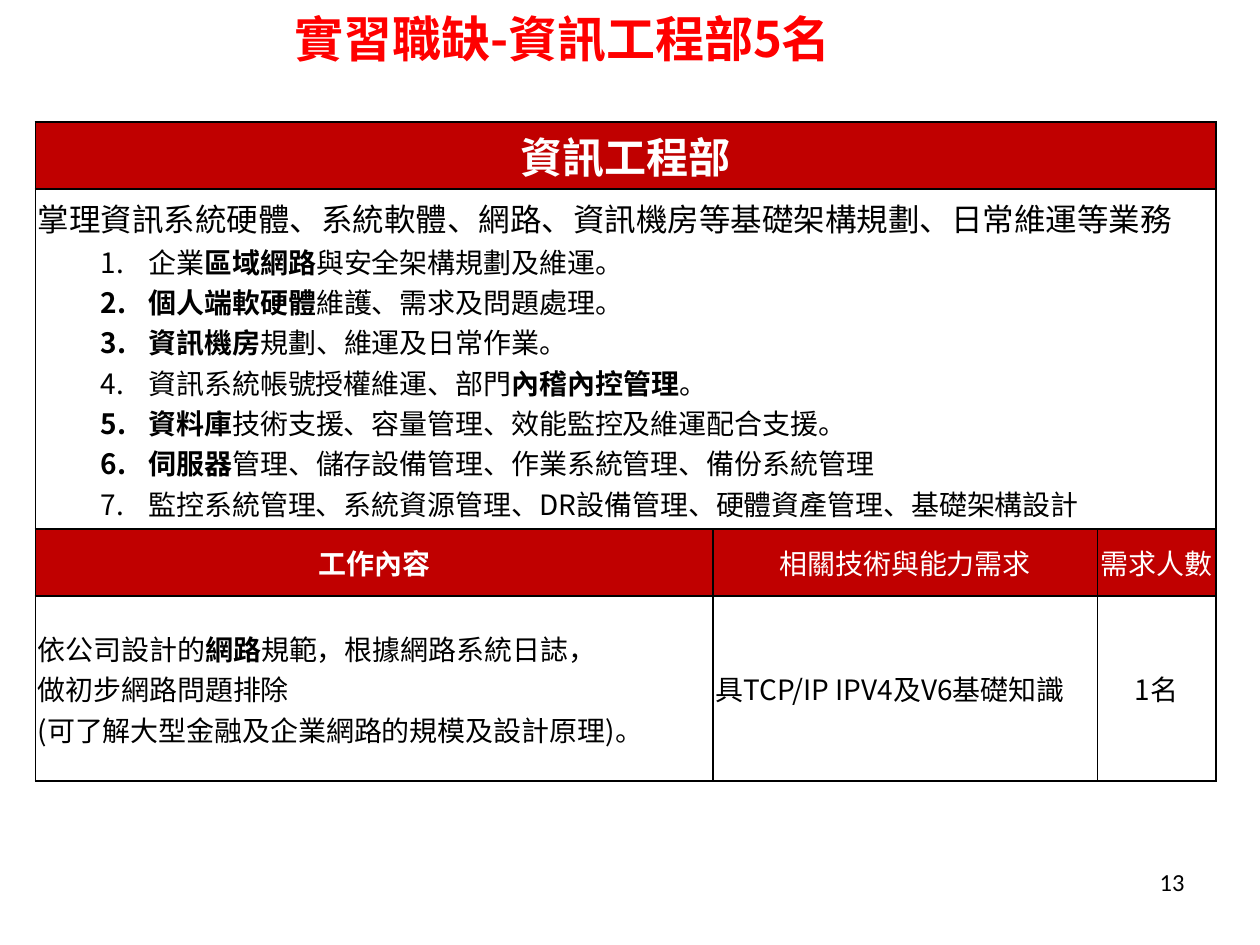
from dataclasses import dataclass

from lxml import etree
from pptx import Presentation
from pptx.dml.color import RGBColor
from pptx.enum.text import MSO_ANCHOR, PP_ALIGN
from pptx.oxml.ns import qn
from pptx.util import Inches, Pt

LEFT, CENTER, RIGHT = PP_ALIGN.LEFT, PP_ALIGN.CENTER, PP_ALIGN.RIGHT
TOP, MIDDLE = MSO_ANCHOR.TOP, MSO_ANCHOR.MIDDLE


@dataclass(frozen=True)
class Theme:
    cjk: str = "Noto Sans CJK SC"
    latin: str = "Calibri"
    title: str = "FF0000"
    band: str = "C00000"
    paper: str = "FFFFFF"
    ink: str = "000000"
    title_size: int = 28
    header_size: int = 24
    lead_size: int = 18
    body_size: int = 16
    number_size: int = 14
    border: float = 1


def write(p, text, *, size, color, font, bold=False, align=LEFT, numbered=False):
    """Fill a paragraph; stretches between ** marks switch bold on and off."""
    p.alignment = align
    if numbered:
        p.level = 1
        pPr = p._p.get_or_add_pPr()
        pPr.set("marL", str(Inches(0.88)))
        pPr.set("indent", str(Inches(-0.38)))
        etree.SubElement(pPr, qn("a:buFont"), typeface="+mj-lt")
        etree.SubElement(pPr, qn("a:buAutoNum"), type="arabicPeriod")
    for i, part in enumerate(text.split("**")):
        if not part:
            continue
        r = p.add_run()
        r.text = part
        r.font.size = Pt(size)
        r.font.bold = bold or i % 2 == 1
        r.font.color.rgb = RGBColor.from_string(color)
        r.font.name = font
        etree.SubElement(r._r.get_or_add_rPr(), qn("a:ea"), typeface=font)


class SlideBuilder:
    def __init__(self, slide, theme):
        self.slide = slide
        self.theme = theme

    def text(self, box, text, anchor=TOP, **fmt):
        sp = self.slide.shapes.add_textbox(*map(Inches, box))
        tf = sp.text_frame
        tf.word_wrap = True
        tf.vertical_anchor = anchor
        write(tf.paragraphs[0], text, **fmt)

    def table(self, left, top, widths, heights):
        frame = self.slide.shapes.add_table(
            len(heights), len(widths), Inches(left), Inches(top),
            Inches(sum(widths)), Inches(sum(heights)))
        table = frame.table
        table.first_row = table.horz_banding = False
        for column, width in zip(table.columns, widths):
            column.width = Inches(width)
        for row, height in zip(table.rows, heights):
            row.height = Inches(height)
        for cell in table.iter_cells():
            self.borders(cell)
        return table

    def borders(self, cell):
        tcPr = cell._tc.get_or_add_tcPr()
        for i, side in enumerate(("a:lnL", "a:lnR", "a:lnT", "a:lnB")):
            ln = etree.Element(qn(side), w=str(Pt(self.theme.border)))
            fill = etree.SubElement(ln, qn("a:solidFill"))
            etree.SubElement(fill, qn("a:srgbClr"), val=self.theme.ink)
            tcPr.insert(i, ln)

    def cell(self, cell, lines, fill=None, **fmt):
        """Write (text, overrides) lines into a cell."""
        cell.margin_left = cell.margin_right = Inches(0.02)
        cell.margin_top = cell.margin_bottom = 0
        cell.vertical_anchor = MIDDLE
        if fill:
            cell.fill.solid()
            cell.fill.fore_color.rgb = RGBColor.from_string(fill)
        else:
            cell.fill.background()
        base = dict(size=self.theme.body_size, color=self.theme.ink,
                    font=self.theme.cjk) | fmt
        tf = cell.text_frame
        for i, (text, overrides) in enumerate(lines):
            p = tf.add_paragraph() if i else tf.paragraphs[0]
            write(p, text, **(base | overrides))


LEAD = "掌理資訊系統硬體、系統軟體、網路、資訊機房等基礎架構規劃、日常維運等業務"
DUTIES = [
    "企業**區域網路**與安全架構規劃及維運。",
    "**個人端軟硬體**維護、需求及問題處理。",
    "**資訊機房**規劃、維運及日常作業。",
    "資訊系統帳號授權維運、部門**內稽內控管理**。",
    "**資料庫**技術支援、容量管理、效能監控及維運配合支援。",
    "**伺服器**管理、儲存設備管理、作業系統管理、備份系統管理",
    "監控系統管理、系統資源管理、DR設備管理、硬體資產管理、基礎架構設計",
]
HEADINGS = ["**工作內容**", "相關技術與能力需求", "需求人數"]
OPENING = [
    (["依公司設計的**網路**規範，根據網路系統日誌，",
      "做初步網路問題排除",
      "(可了解大型金融及企業網路的規模及設計原理)。"], LEFT),
    (["具TCP/IP IPV4及V6基礎知識"], LEFT),
    (["1名"], CENTER),
]


def main():
    prs = Presentation()
    prs.slide_width, prs.slide_height = Inches(10), Inches(7.5)
    theme = Theme()
    s = SlideBuilder(prs.slides.add_slide(prs.slide_layouts[6]), theme)

    s.text((2.24, 0, 7.48, 0.6), "實習職缺-資訊工程部5名", anchor=MIDDLE,
           size=theme.title_size, color=theme.title, font=theme.cjk, bold=True)
    s.text((7.17, 6.83, 2.33, 0.52), "13", size=theme.number_size,
           color=theme.ink, font=theme.latin, align=RIGHT)

    table = s.table(0.28, 0.97, [5.38, 3.05, 0.94], [0.53, 2.7, 0.53, 1.47])
    for row in (0, 1):
        table.cell(row, 0).merge(table.cell(row, 2))
    header = dict(fill=theme.band, color=theme.paper, align=CENTER)
    s.cell(table.cell(0, 0), [("資訊工程部", {})], bold=True,
           size=theme.header_size, **header)
    s.cell(table.cell(1, 0),
           [(LEAD, dict(size=theme.lead_size))]
           + [(duty, dict(numbered=True)) for duty in DUTIES],
           fill=theme.paper)
    for col, heading in enumerate(HEADINGS):
        s.cell(table.cell(2, col), [(heading, {})], **header)
    for col, (lines, align) in enumerate(OPENING):
        s.cell(table.cell(3, col), [(line, {}) for line in lines], align=align)

    prs.save("out.pptx")


if __name__ == "__main__":
    main()
